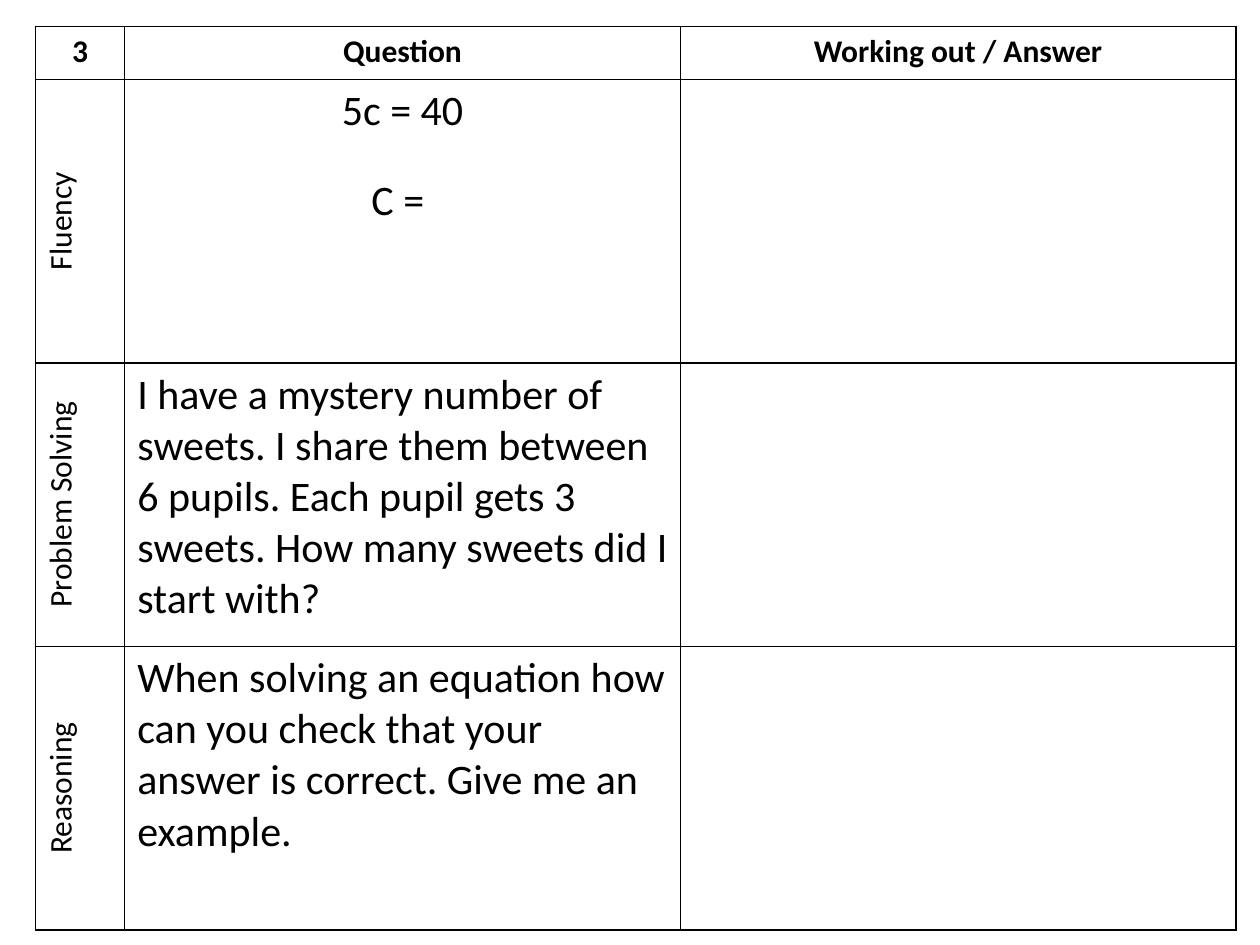
import dataclasses

import lxml.etree
import pptx
import pptx.dml.color
import pptx.enum.text
import pptx.oxml.ns
import pptx.util

Inches = pptx.util.Inches
Pt = pptx.util.Pt
ALIGN = pptx.enum.text.PP_ALIGN
ANCHOR = pptx.enum.text.MSO_ANCHOR
COLORS = {"ink": "000000"}
COLS = [0.71, 4.41, 4.41]
ROWS = [0.42, 2.25, 2.25, 2.25]


@dataclasses.dataclass
class Style:
    size: int
    bold: bool = False
    align: ALIGN = ALIGN.CENTER
    turn: bool = False
    gap: int = 0


@dataclasses.dataclass
class Entry:
    lines: tuple[str, ...]
    style: Style


HEAD = Style(18, bold=True)
SIDE = Style(18, turn=True)
SUM = Style(24, gap=22)
PROSE = Style(24, align=ALIGN.LEFT)
BLANK = Entry(("",), HEAD)

GRID = [
    [Entry((text,), HEAD) for text in ("3", "Question", "Working out / Answer")],
    [Entry(("Fluency",), SIDE), Entry(("5c = 40", "C = "), SUM), BLANK],
    [
        Entry(("Problem Solving",), SIDE),
        Entry(("I have a mystery number of sweets. I share them between 6 pupils. "
               "Each pupil gets 3 sweets. How many sweets did I start with?",), PROSE),
        BLANK,
    ],
    [
        Entry(("Reasoning",), SIDE),
        Entry(("When solving an equation how can you check that your answer is "
               "correct. Give me an example.",), PROSE),
        BLANK,
    ],
]


def format_font(font, style: Style) -> None:
    values = {"name": "Calibri", "size": Pt(style.size), "bold": style.bold}
    for name, value in values.items():
        setattr(font, name, value)
    font.color.rgb = pptx.dml.color.RGBColor.from_string(COLORS["ink"])


def draw_edges(cell) -> None:
    qn = pptx.oxml.ns.qn
    props = cell._tc.get_or_add_tcPr()
    for side in "LRTB":
        line = lxml.etree.SubElement(props, qn(f"a:ln{side}"), w=str(Pt(1)))
        fill = lxml.etree.SubElement(line, qn("a:solidFill"))
        lxml.etree.SubElement(fill, qn("a:srgbClr"), val=COLORS["ink"])


def fill_cell(cell, entry: Entry) -> None:
    style = entry.style
    draw_edges(cell)
    cell.fill.background()
    if style.turn:
        cell.vertical_anchor = ANCHOR.MIDDLE
        cell._tc.get_or_add_tcPr().set("vert", "vert270")
    frame = cell.text_frame
    frame.text = "\n".join(entry.lines)
    for index, para in enumerate(frame.paragraphs):
        para.alignment = style.align
        if index:
            para.space_before = Pt(style.gap)
        for run in para.runs:
            format_font(run.font, style)


def draw_table(slide) -> None:
    table = slide.shapes.add_table(
        len(ROWS), len(COLS), Inches(0.28), Inches(0.21),
        Inches(sum(COLS)), Inches(sum(ROWS)),
    ).table
    for name in ("first_row", "horz_banding"):
        setattr(table, name, False)
    for col, width in zip(table.columns, COLS):
        col.width = Inches(width)
    for row, height, entries in zip(table.rows, ROWS, GRID):
        row.height = Inches(height)
        for cell, entry in zip(row.cells, entries):
            fill_cell(cell, entry)


def main() -> None:
    deck = pptx.Presentation()
    deck.slide_width = Inches(10)
    deck.slide_height = Inches(7.5)
    draw_table(deck.slides.add_slide(deck.slide_layouts[6]))
    deck.save("out.pptx")


if __name__ == "__main__":
    main()
